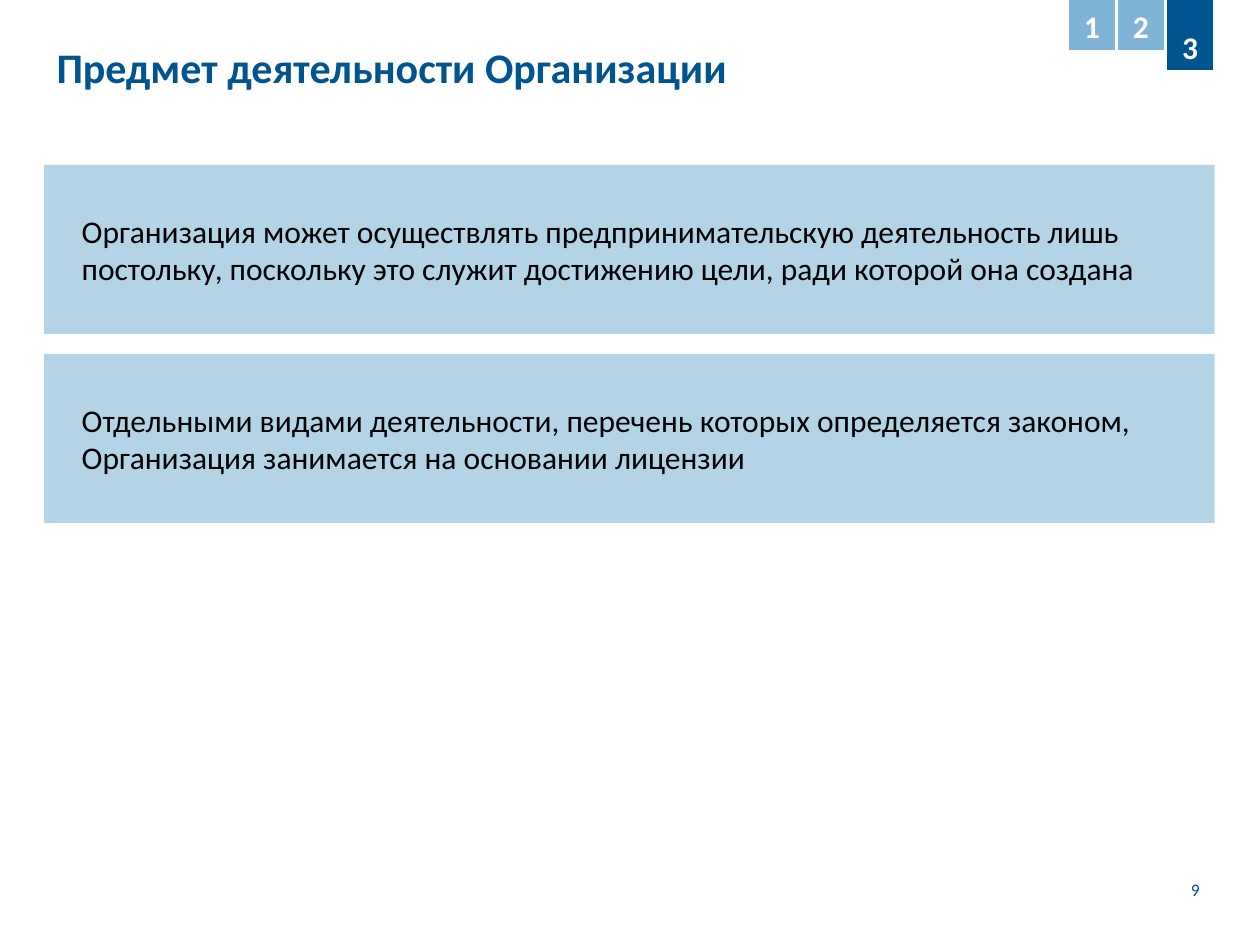
from dataclasses import dataclass

from pptx import Presentation
from pptx.dml.color import RGBColor
from pptx.enum.shapes import MSO_SHAPE
from pptx.enum.text import MSO_ANCHOR, PP_ALIGN
from pptx.util import Inches, Pt

RECTANGLE = MSO_SHAPE.RECTANGLE
TOP, MIDDLE, BOTTOM = MSO_ANCHOR.TOP, MSO_ANCHOR.MIDDLE, MSO_ANCHOR.BOTTOM
LEFT, CENTER, RIGHT = PP_ALIGN.LEFT, PP_ALIGN.CENTER, PP_ALIGN.RIGHT

SLIDE_WIDTH, SLIDE_HEIGHT = 10, 7.5
MARGIN = 0.35
CONTENT_WIDTH = 9.29
CONTENT_RIGHT = MARGIN + CONTENT_WIDTH


@dataclass(frozen=True)
class Theme:
    font: str = "Calibri"
    dark: str = "00548F"
    medium: str = "7FB4D7"
    light: str = "B3D3E7"
    white: str = "FFFFFF"
    black: str = "000000"
    title_size: int = 24
    body_size: int = 18
    small_size: int = 10
    tab_border: int = 2


@dataclass(frozen=True)
class Box:
    left: float
    top: float
    width: float
    height: float

    def lengths(self):
        return [Inches(value) for value in (self.left, self.top, self.width, self.height)]


THEME = Theme()


def color(code):
    return RGBColor.from_string(code)


def write_text(shape, text, size, text_color, bold=False, align=LEFT, anchor=TOP):
    frame = shape.text_frame
    frame.word_wrap = True
    frame.vertical_anchor = anchor
    paragraph = frame.paragraphs[0]
    paragraph.alignment = align
    run = paragraph.add_run()
    run.text = text
    run.font.name = THEME.font
    run.font.size = Pt(size)
    run.font.bold = bold
    run.font.color.rgb = color(text_color)
    return paragraph


def add_rectangle(slide, box, fill):
    shape = slide.shapes.add_shape(RECTANGLE, *box.lengths())
    shape.shadow.inherit = False
    shape.fill.solid()
    shape.fill.fore_color.rgb = color(fill)
    shape.line.fill.background()
    return shape


def add_title(slide, box, text):
    shape = slide.shapes.add_textbox(*box.lengths())
    write_text(shape, text, THEME.title_size, THEME.dark, bold=True)


def add_page_number(slide, box, number):
    shape = slide.shapes.add_textbox(*box.lengths())
    write_text(shape, str(number), THEME.small_size, THEME.dark, align=RIGHT, anchor=BOTTOM)


def add_section_tabs(slide, box, count, current):
    """Place equal tabs across the box; only the current one has its full height."""
    width = box.width / count
    for number in range(1, count + 1):
        active = number == current
        height = box.height if active else box.height * 0.73
        tab_box = Box(box.left + (number - 1) * width, box.top, width, height)
        tab = add_rectangle(slide, tab_box, THEME.dark if active else THEME.medium)
        tab.line.color.rgb = color(THEME.white)
        tab.line.width = Pt(THEME.tab_border)
        write_text(tab, str(number), THEME.body_size, THEME.white,
                   bold=True, align=CENTER, anchor=BOTTOM)


def add_statements(slide, box, statements, gap=0.16, indent=0.2):
    """Stack equal panels in the box, one for each statement."""
    height = (box.height - gap * (len(statements) - 1)) / len(statements)
    for row, statement in enumerate(statements):
        panel_box = Box(box.left, box.top + row * (height + gap), box.width, height)
        panel = add_rectangle(slide, panel_box, THEME.light)
        paragraph = write_text(panel, statement, THEME.body_size, THEME.black, anchor=MIDDLE)
        paragraph.level = 1
        properties = paragraph._p.get_or_add_pPr()
        properties.set("marL", str(Inches(indent)))
        properties.set("indent", "0")


def main():
    presentation = Presentation()
    presentation.slide_width = Inches(SLIDE_WIDTH)
    presentation.slide_height = Inches(SLIDE_HEIGHT)
    slide = presentation.slides.add_slide(presentation.slide_layouts[6])

    add_title(slide, Box(MARGIN, 0.28, CONTENT_WIDTH, 0.79), "Предмет деятельности Организации")
    add_page_number(slide, Box(8.46, 6.79, 1.16, 0.4), 9)
    tabs_width = 1.17
    add_section_tabs(slide, Box(CONTENT_RIGHT - tabs_width, -0.03, tabs_width, 0.6),
                     count=3, current=3)
    add_statements(slide, Box(MARGIN, 1.31, CONTENT_WIDTH, 2.84), [
        "Организация может осуществлять предпринимательскую деятельность лишь "
        "постольку, поскольку это служит достижению цели, ради которой она создана",
        "Отдельными видами деятельности, перечень которых определяется законом, "
        "Организация занимается на основании лицензии",
    ])
    presentation.save("out.pptx")


if __name__ == "__main__":
    main()
